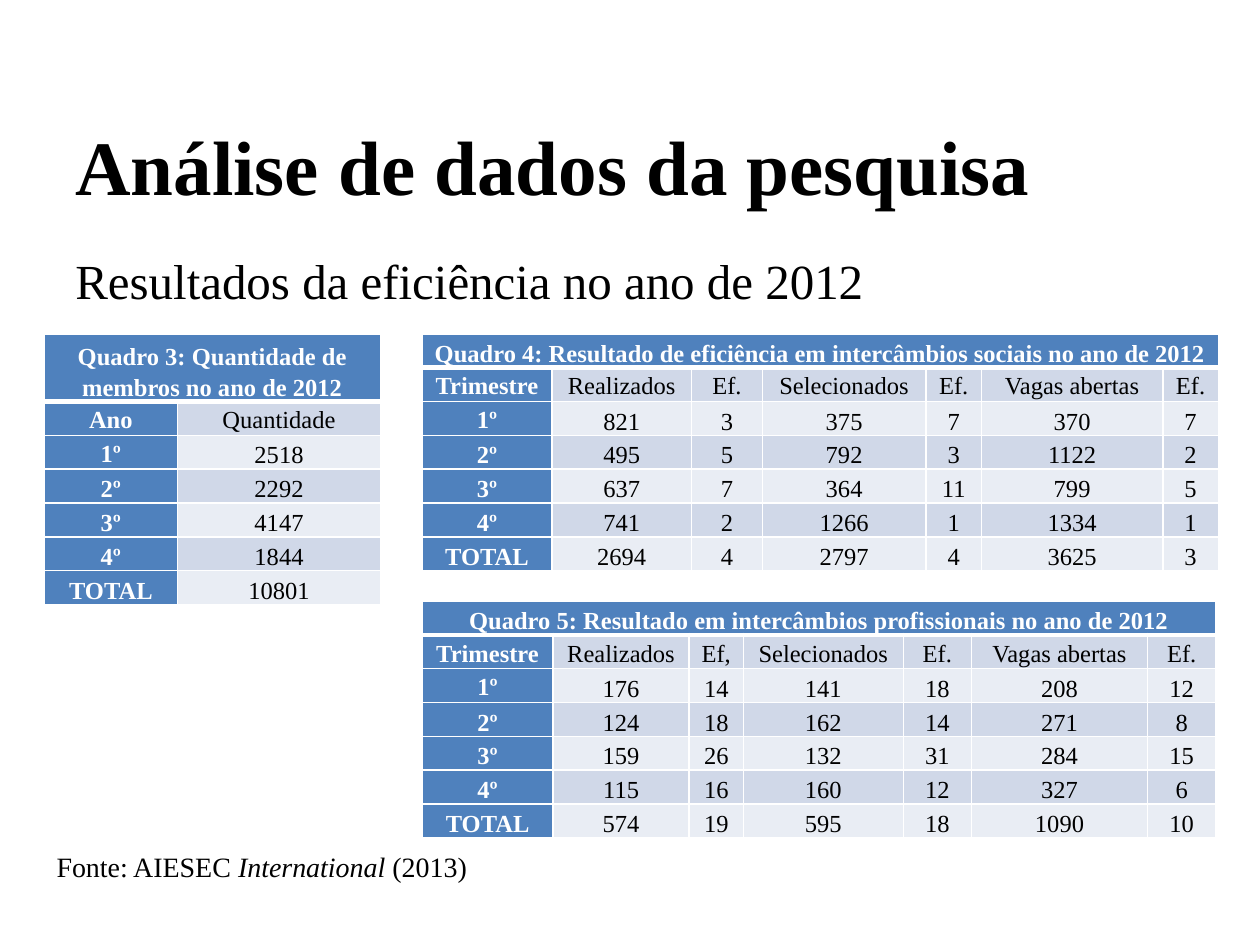
from lxml.etree import SubElement
from pptx import Presentation
from pptx.dml.color import RGBColor
from pptx.enum.text import MSO_ANCHOR, PP_ALIGN
from pptx.oxml.ns import qn
from pptx.util import Inches, Pt

COLORS = {
    "text": "000000",
    "white": "FFFFFF",
    "header": "4F81BD",
    "band_dark": "D0D8E8",
    "band_light": "E9EDF4",
}
FONT = "Times New Roman"
QUARTERS = ["1º", "2º", "3º", "4º", "TOTAL"]

MEMBERS = [
    ["Ano", "Quantidade"],
    *zip(QUARTERS, ["2518", "2292", "4147", "1844", "10801"]),
]
SOCIAL = [
    ["Trimestre", "Realizados", "Ef.", "Selecionados", "Ef.", "Vagas abertas", "Ef."],
    ["1º", "821", "3", "375", "7", "370", "7"],
    ["2º", "495", "5", "792", "3", "1122", "2"],
    ["3º", "637", "7", "364", "11", "799", "5"],
    ["4º", "741", "2", "1266", "1", "1334", "1"],
    ["TOTAL", "2694", "4", "2797", "4", "3625", "3"],
]
PROFESSIONAL = [
    ["Trimestre", "Realizados", "Ef,", "Selecionados", "Ef.", "Vagas abertas", "Ef."],
    ["1º", "176", "14", "141", "18", "208", "12"],
    ["2º", "124", "18", "162", "14", "271", "8"],
    ["3º", "159", "26", "132", "31", "284", "15"],
    ["4º", "115", "16", "160", "12", "327", "6"],
    ["TOTAL", "574", "19", "595", "18", "1090", "10"],
]


def rgb(name):
    return RGBColor.from_string(COLORS[name])


def style_font(paragraph, size, color="text", bold=False):
    font = paragraph.font
    font.name = FONT
    font.size = Pt(size)
    font.bold = bold
    font.color.rgb = rgb(color)


def add_text(slide, box, runs, size, bold=False, anchor=MSO_ANCHOR.TOP, wrap=True):
    frame = slide.shapes.add_textbox(*map(Inches, box)).text_frame
    frame.word_wrap = wrap
    frame.vertical_anchor = anchor
    paragraph = frame.paragraphs[0]
    style_font(paragraph, size, bold=bold)
    for text, italic in runs:
        run = paragraph.add_run()
        run.text = text
        if italic:
            run.font.italic = True


def set_borders(cell, top, bottom):
    properties = cell._tc.get_or_add_tcPr()
    for side, width in (("L", 1), ("R", 1), ("T", top), ("B", bottom)):
        line = SubElement(properties, qn(f"a:ln{side}"), w=str(Pt(width)))
        fill = SubElement(line, qn("a:solidFill"))
        SubElement(fill, qn("a:srgbClr"), val=COLORS["white"])


def fill_cell(cell, text, fill, row, column):
    is_header = row == 0 or column == 0
    set_borders(cell, top=3 if row == 1 else 1, bottom=3 if row == 0 else 1)
    cell.fill.solid()
    cell.fill.fore_color.rgb = rgb(fill)
    cell.margin_left = cell.margin_right = Inches(0.05)
    cell.margin_top = cell.margin_bottom = 0
    centred = row == 1 or (row == 2 and column == 0)
    cell.vertical_anchor = MSO_ANCHOR.MIDDLE if centred else MSO_ANCHOR.BOTTOM
    paragraph = cell.text_frame.paragraphs[0]
    paragraph.text = text
    paragraph.alignment = PP_ALIGN.CENTER
    paragraph.line_spacing = 1.15
    style_font(paragraph, 14, "white" if is_header else "text", is_header)


def add_results_table(slide, box, title, body, widths):
    rows = [[title] + [""] * (len(widths) - 1), *body]
    frame = slide.shapes.add_table(len(rows), len(widths), *map(Inches, box))
    table = frame.table
    for column, width in zip(table.columns, widths):
        column.width = Inches(width)
    for r, values in enumerate(rows):
        table.rows[r].height = Inches(0.21 if r else 0.22)
        band = "band_dark" if r % 2 else "band_light"
        for c, value in enumerate(values):
            fill = "header" if r == 0 or c == 0 else band
            fill_cell(table.cell(r, c), value, fill, r, c)
    table.cell(0, 0).merge(table.cell(0, len(widths) - 1))
    frame.height = Inches(box[3])


def main():
    presentation = Presentation()
    presentation.slide_width = Inches(10)
    presentation.slide_height = Inches(7.5)
    slide = presentation.slides.add_slide(presentation.slide_layouts[6])

    add_text(slide, (0.5, 1.94, 9, 4.87),
             [("Resultados da eficiência no ano de 2012", False)], 28)
    add_text(slide, (0.5, 0.83, 9, 0.95),
             [("Análise de dados da pesquisa", False)], 44,
             bold=True, anchor=MSO_ANCHOR.MIDDLE)
    add_results_table(
        slide, (3.35, 2.65, 6.3, 1.88),
        "Quadro 4: Resultado de eficiência em intercâmbios sociais no ano de 2012",
        SOCIAL, [1.03, 1.11, 0.56, 1.3, 0.44, 1.44, 0.44])
    add_results_table(
        slide, (3.35, 4.77, 6.3, 1.88),
        "Quadro 5: Resultado em intercâmbios profissionais no ano de 2012",
        PROFESSIONAL, [1.04, 1.08, 0.43, 1.27, 0.54, 1.4, 0.54])
    add_results_table(
        slide, (0.35, 2.65, 2.67, 2.15),
        "Quadro 3: Quantidade de membros no ano de 2012",
        MEMBERS, [1.06, 1.61])
    add_text(slide, (0.35, 6.69, 3.58, 0.37),
             [("Fonte: AIESEC ", False), ("International", True), (" (2013)", False)],
             16, wrap=False)
    presentation.save("out.pptx")


if __name__ == "__main__":
    main()
